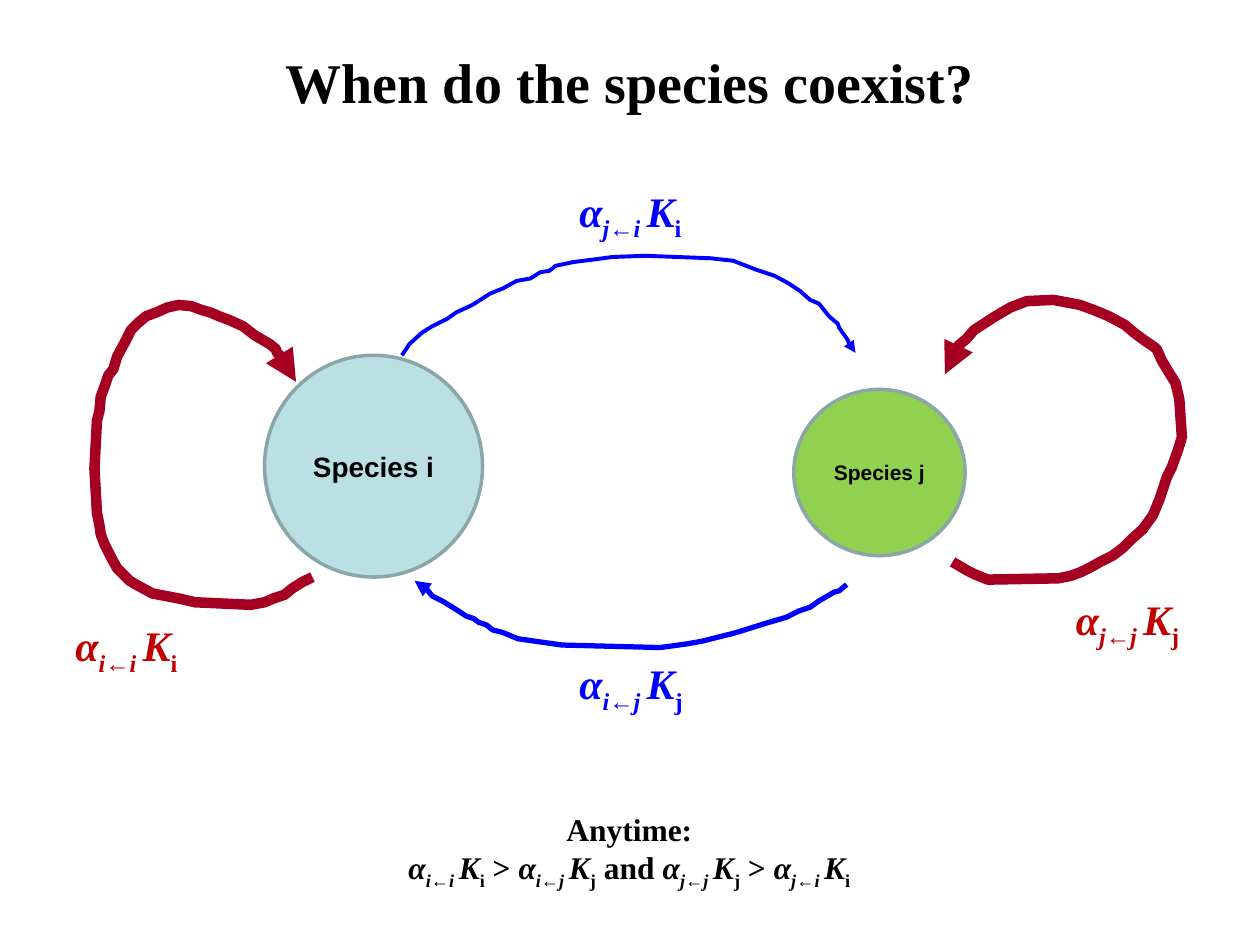
from dataclasses import dataclass

from pptx import Presentation
from pptx.dml.color import RGBColor
from pptx.enum.shapes import MSO_SHAPE
from pptx.enum.text import MSO_ANCHOR, PP_ALIGN
from pptx.oxml.ns import qn
from pptx.util import Pt

OVAL = MSO_SHAPE.OVAL
TOP, MIDDLE = MSO_ANCHOR.TOP, MSO_ANCHOR.MIDDLE
LEFT, CENTER = PP_ALIGN.LEFT, PP_ALIGN.CENTER
PX = 9144  # EMU per px, 100 px to the inch


@dataclass(frozen=True)
class Theme:
    serif: str = "Times New Roman"
    sans: str = "Arial"
    ink: str = "000000"
    rim: str = "8AA6A8"
    pale: str = "BBE0E3"
    green: str = "92D050"
    loop: str = "A50021"
    red: str = "C00000"
    blue: str = "0000FF"
    title: int = 32
    label: int = 24
    note: int = 18
    large: int = 16
    small: int = 12


THEME = Theme()

# Hand-drawn arrows: points in px from the corner of each box
LOOP_I = [
    (173, 216), (165, 220), (157, 225), (151, 230), (142, 233), (135, 236),
    (124, 238), (80, 236), (67, 233), (46, 229), (35, 223), (28, 219),
    (22, 213), (18, 209), (13, 200), (8, 190), (5, 182), (4, 175), (2, 165),
    (0, 130), (2, 92), (4, 84), (5, 73), (9, 62), (11, 56), (15, 51),
    (18, 41), (24, 30), (29, 20), (35, 14), (41, 9), (49, 6), (58, 2),
    (67, 0), (77, 1), (85, 4), (92, 6), (99, 9), (107, 12), (118, 17),
    (127, 24), (139, 31), (144, 35), (145, 38), (151, 44), (155, 51),
    (160, 61)]
LOOP_J = [
    (6, 208), (18, 215), (24, 218), (34, 222), (90, 221), (100, 219),
    (108, 216), (116, 212), (123, 208), (133, 203), (141, 197), (148, 190),
    (157, 182), (165, 171), (170, 159), (176, 141), (180, 133), (185, 119),
    (188, 109), (186, 79), (183, 66), (178, 58), (172, 48), (168, 39),
    (164, 36), (158, 32), (150, 26), (143, 20), (130, 13), (118, 8),
    (107, 4), (86, 0), (65, 1), (52, 6), (40, 13), (23, 24), (17, 31),
    (11, 36), (7, 42), (3, 52), (0, 59)]
I_TO_J = [
    (0, 79), (6, 70), (16, 61), (24, 56), (36, 50), (43, 45), (56, 39),
    (70, 30), (80, 26), (91, 20), (102, 18), (110, 13), (117, 12), (122, 8),
    (136, 5), (152, 3), (167, 1), (193, 0), (245, 2), (263, 4), (281, 11),
    (296, 16), (307, 22), (316, 28), (324, 35), (331, 38), (339, 48),
    (346, 54), (347, 57), (354, 67), (355, 70), (360, 77)]
J_TO_I = [
    (343, 3), (337, 8), (333, 9), (328, 12), (321, 16), (314, 21), (305, 24),
    (295, 29), (278, 34), (259, 40), (252, 42), (240, 45), (228, 48),
    (217, 50), (195, 53), (117, 51), (103, 49), (82, 46), (70, 41), (62, 39),
    (57, 35), (51, 33), (47, 30), (41, 28), (35, 24), (22, 16), (14, 12),
    (10, 7), (6, 5), (0, 0)]


def emu(box):
    return [n * PX for n in box]


def rgb(code):
    return RGBColor.from_string(code)


def style(par, size, color, face=THEME.serif, align=CENTER):
    par.alignment = align
    font = par.font
    font.name, font.size, font.bold = face, Pt(size), True
    font.color.rgb = rgb(color)


def add_run(par, text, slant=False, sub=False):
    run = par.add_run()
    run.text = text
    run.font.italic = slant
    if sub:
        run._r.get_or_add_rPr().set("baseline", "-25000")


def add_term(par, to, frm):
    """Write the effect of species frm on species to."""
    add_run(par, "α", slant=True)
    add_run(par, f"{to}←{frm} ", slant=True, sub=True)
    add_run(par, "K", slant=True)
    add_run(par, frm, sub=True)


def add_title(slide, box, text):
    title = slide.shapes.title
    title.left, title.top, title.width, title.height = emu(box)
    frame = title.text_frame
    frame.text = text
    frame.vertical_anchor = TOP
    style(frame.paragraphs[0], THEME.title, THEME.ink)


def add_disc(slide, box, text, fill, size):
    disc = slide.shapes.add_shape(OVAL, *emu(box))
    disc.shadow.inherit = False
    disc.fill.solid()
    disc.fill.fore_color.rgb = rgb(fill)
    disc.line.color.rgb = rgb(THEME.rim)
    disc.line.width = Pt(2)
    frame = disc.text_frame
    frame.text = text
    frame.vertical_anchor = MIDDLE
    style(frame.paragraphs[0], size, THEME.ink, THEME.sans)


def add_curve(slide, spot, points, color, width):
    pen = slide.shapes.build_freeform(*points[0], scale=PX)
    pen.add_line_segments(points[1:], close=False)
    curve = pen.convert_to_shape(*emu(spot))
    curve.shadow.inherit = False
    curve.fill.background()
    curve.line.color.rgb = rgb(color)
    curve.line.width = Pt(width)
    line = curve.line._get_or_add_ln()
    head = line.makeelement(qn("a:tailEnd"), {"type": "triangle"})
    line.append(head)


def add_frame(slide, box):
    frame = slide.shapes.add_textbox(*emu(box)).text_frame
    frame.word_wrap = True
    return frame


def add_label(slide, spot, to, frm, color):
    par = add_frame(slide, (*spot, 135, 50)).paragraphs[0]
    style(par, THEME.label, color, align=LEFT)
    add_term(par, to, frm)


def add_rule(slide, box):
    frame = add_frame(slide, box)
    head, rule = frame.paragraphs[0], frame.add_paragraph()
    for par in (head, rule):
        style(par, THEME.note, THEME.ink)
    add_run(head, "Anytime:")
    for own, other, end in (("i", "j", " and "), ("j", "i", "")):
        add_term(rule, own, own)
        add_run(rule, " > ")
        add_term(rule, own, other)
        if end:
            add_run(rule, end)


def main():
    deck = Presentation()
    deck.slide_width, deck.slide_height = emu((1000, 750))
    slide = deck.slides.add_slide(deck.slide_layouts[5])
    add_title(slide, (0, 33, 1000, 64), "When do the species coexist?")

    # Species
    add_disc(slide, (210, 282, 173, 176), "Species i", THEME.pale, THEME.large)
    add_disc(slide, (630, 309, 136, 132), "Species j", THEME.green, THEME.small)

    # Effects within and between species
    add_curve(slide, (75, 242), LOOP_I, THEME.loop, 6)
    add_curve(slide, (750, 238), LOOP_J, THEME.loop, 6)
    add_curve(slide, (319, 203), I_TO_J, THEME.blue, 2.25)
    add_curve(slide, (329, 461), J_TO_I, THEME.blue, 3)

    # Labels of the effects
    add_label(slide, (450, 142), "j", "i", THEME.blue)
    add_label(slide, (450, 517), "i", "j", THEME.blue)
    add_label(slide, (844, 466), "j", "j", THEME.red)
    add_label(slide, (50, 487), "i", "i", THEME.red)

    add_rule(slide, (208, 638, 583, 71))
    deck.save("out.pptx")


if __name__ == "__main__":
    main()
